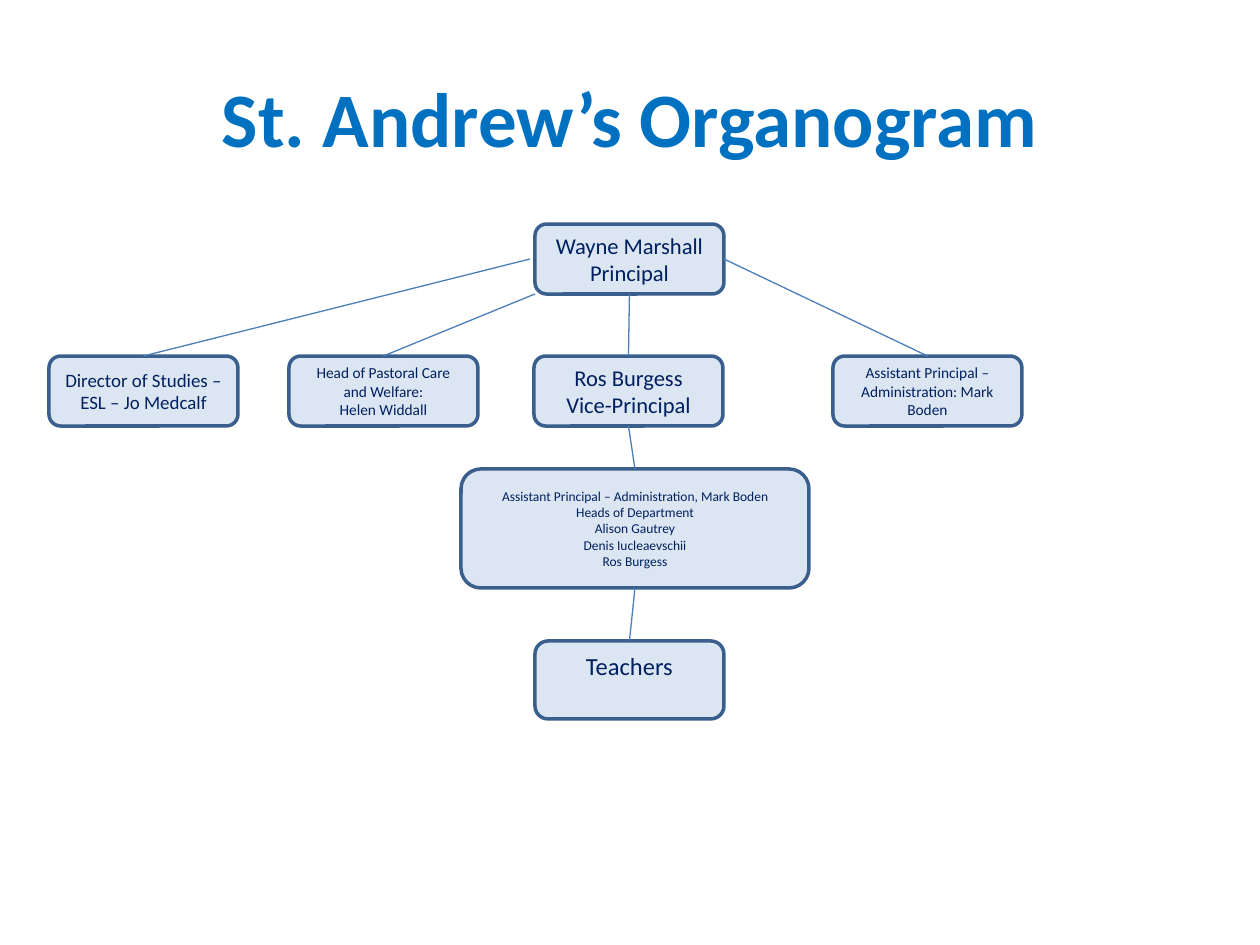
from lxml import etree
from pptx import Presentation
from pptx.dml.color import RGBColor
from pptx.enum.shapes import MSO_CONNECTOR, MSO_SHAPE
from pptx.enum.text import MSO_ANCHOR, PP_ALIGN
from pptx.oxml.ns import qn
from pptx.util import Pt

EMU_PER_PX = 914400 / 126
ROUNDED = MSO_SHAPE.ROUNDED_RECTANGLE
STRAIGHT = MSO_CONNECTOR.STRAIGHT
MIDDLE, TOP = MSO_ANCHOR.MIDDLE, MSO_ANCHOR.TOP
CENTER = PP_ALIGN.CENTER
TOP_SITE, BOTTOM_SITE, RIGHT_SITE = 0, 2, 3
COLORS = {"title": "0070C0", "text": "002060", "box": "DCE6F2",
          "border": "3A5F8C", "link": "4B7EBC"}

ROLE_W, ROLE_H = 189, 70
STAFF_TOP = 356
# key: (left, top, width, height, font size, anchor, lines)
ROLES = {
    "principal": (535, 224, ROLE_W, ROLE_H, 12.9, MIDDLE,
                  ["Wayne Marshall", "Principal"]),
    "vice": (534, STAFF_TOP, ROLE_W, ROLE_H, 12.9, MIDDLE,
             ["Ros Burgess", "Vice-Principal"]),
    "teachers": (535, 641, ROLE_W, 78, 14, TOP, ["Teachers"]),
    "heads": (461, 469, 348, 119, 7.7, MIDDLE,
              ["Assistant Principal – Administration, Mark Boden",
               "Heads of Department", "Alison Gautrey",
               "Denis Iucleaevschii", "Ros Burgess"]),
    "pastoral": (289, STAFF_TOP, ROLE_W, ROLE_H, 8.8, MIDDLE,
                 ["Head of Pastoral Care and Welfare:", "Helen Widdall"]),
    "administration": (833, STAFF_TOP, ROLE_W, ROLE_H, 8.8, MIDDLE,
                       ["Assistant Principal – Administration: Mark Boden"]),
    "studies": (49, STAFF_TOP, ROLE_W, ROLE_H, 10.8, MIDDLE,
                ["Director of Studies – ESL – Jo Medcalf"]),
}
LINKS = [
    ("principal", BOTTOM_SITE, "vice"),
    ("principal", RIGHT_SITE, "administration"),
    ("vice", BOTTOM_SITE, "heads"),
    ("heads", BOTTOM_SITE, "teachers"),
]
# Links that start at a free point beside the principal's box
LOOSE_LINKS = [((535, 294), "pastoral"), ((530, 259), "studies")]


def px(*lengths):
    return [round(length * EMU_PER_PX) for length in lengths]


def rgb(name):
    return RGBColor.from_string(COLORS[name])


def write_lines(frame, lines, anchor, color, **font_format):
    frame.word_wrap = True
    frame.vertical_anchor = anchor
    for index, line in enumerate(lines):
        paragraph = frame.paragraphs[0] if index == 0 else frame.add_paragraph()
        paragraph.alignment = CENTER
        run = paragraph.add_run()
        run.text = line
        run.font.color.rgb = rgb(color)
        for name, value in {"name": "Calibri", **font_format}.items():
            setattr(run.font, name, value)


def add_title(slide, text):
    title = slide.shapes.add_textbox(*px(63, 38, 1134, 157))
    write_lines(title.text_frame, [text], MIDDLE, "title",
                size=Pt(44), bold=True)


def add_role(slide, left, top, width, height, size, anchor, lines):
    box = slide.shapes.add_shape(ROUNDED, *px(left, top, width, height))
    box.shadow.inherit = False
    box.fill.solid()
    box.fill.fore_color.rgb = rgb("box")
    box.line.color.rgb = rgb("border")
    box.line.width = Pt(2)
    write_lines(box.text_frame, lines, anchor, "text", size=Pt(size))
    return box


def add_link(slide, start, target):
    """Draw a line from a point in px to the top of the target box."""
    x, y = px(*start)
    link = slide.shapes.add_connector(STRAIGHT, x, y, x, y)
    link.end_connect(target, TOP_SITE)
    link.line.color.rgb = rgb("link")
    link.line.width = Pt(0.75)
    etree.SubElement(link._element.spPr, qn("a:effectLst"))
    return link


def main():
    presentation = Presentation()
    presentation.slide_width, presentation.slide_height = px(1260, 945)
    slide = presentation.slides.add_slide(presentation.slide_layouts[6])

    add_title(slide, "St. Andrew’s Organogram")
    boxes = {key: add_role(slide, *role) for key, role in ROLES.items()}
    for source, site, target in LINKS:
        link = add_link(slide, (0, 0), boxes[target])
        link.begin_connect(boxes[source], site)
    for start, target in LOOSE_LINKS:
        add_link(slide, start, boxes[target])

    presentation.save("out.pptx")


if __name__ == "__main__":
    main()
